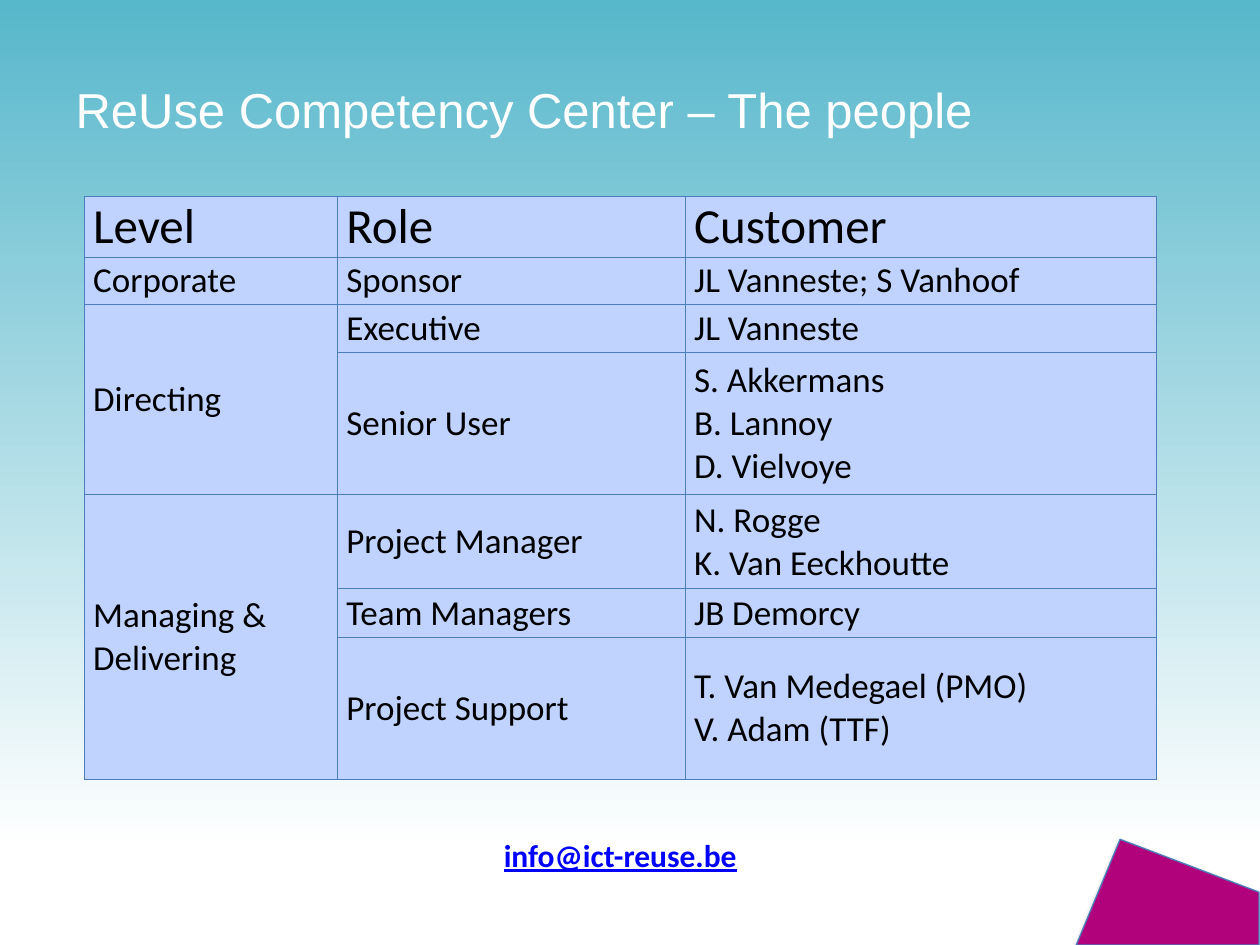
from lxml import etree
from pptx import Presentation
from pptx.dml.color import RGBColor
from pptx.enum import text
from pptx.oxml import ns
from pptx.util import Pt

BORDER = "4B7EBC"
COLUMNS = [144.72, 198.72, 269.28]
HEIGHTS = [34.8, 27.2, 27.2, 81.2, 54, 27.6, 81.2]
ROWS = [
    ("Level", "Role", "Customer"),
    ("Corporate", "Sponsor", "JL Vanneste; S Vanhoof"),
    ("Directing", "Executive", "JL Vanneste"),
    ("", "Senior User", "S. Akkermans\nB. Lannoy\nD. Vielvoye"),
    ("Managing & Delivering", "Project Manager", "N. Rogge\nK. Van Eeckhoutte"),
    ("", "Team Managers", "JB Demorcy"),
    ("", "Project Support", "T. Van Medegael (PMO)\nV. Adam (TTF)"),
]
LEVEL_SPANS = [(2, 3), (4, 6)]


def rgb(value):
    return RGBColor.from_string(value)


def child(parent, tag, **attrs):
    return etree.SubElement(parent, ns.qn(tag), attrs)


def set_font(p, name, size, color):
    p.font.name, p.font.size = name, Pt(size)
    p.font.color.rgb = rgb(color)


def paint_background(s):
    fill = s.background.fill
    fill.gradient()
    fill.gradient_angle = 270
    for stop, color, position in zip(fill.gradient_stops, ("57B7CB", "FFFFFF"), (0, 0.9)):
        stop.color.rgb = rgb(color)
        stop.position = position


def add_corner(s, x, y, w, h):
    builder = s.shapes.build_freeform(Pt(x), Pt(y + h), scale=1)
    builder.add_line_segments([
        (Pt(x + 0.24 * w), Pt(y)),
        (Pt(x + w), Pt(y + 0.5 * h)),
        (Pt(x + w), Pt(y + h)),
    ])
    sp = builder.convert_to_shape()
    sp.fill.solid()
    sp.fill.fore_color.rgb = rgb("B1027C")
    sp.line.color.rgb = rgb(BORDER)
    sp.line.width = Pt(0.75)
    sp.shadow.inherit = False
    effects = sp._element.spPr.find(ns.qn("a:effectLst"))
    shadow = child(effects, "a:outerShdw", blurRad=str(Pt(3.1)), dist=str(Pt(1.8)),
                   dir="5400000", rotWithShape="0")
    child(child(shadow, "a:srgbClr", val="000000"), "a:alpha", val="35000")


def place_title(s, x, y, w, h):
    sp = s.shapes.title
    sp.left, sp.top, sp.width, sp.height = Pt(x), Pt(y), Pt(w), Pt(h)
    tf = sp.text_frame
    tf.text = "ReUse Competency Center – The people"
    tf.vertical_anchor = text.MSO_ANCHOR.MIDDLE
    p = tf.paragraphs[0]
    p.alignment = text.PP_ALIGN.LEFT
    set_font(p, "Arial", 28, "FFFFFF")


def set_borders(cell):
    tcPr = cell._tc.get_or_add_tcPr()
    for i, side in enumerate(("a:lnL", "a:lnR", "a:lnT", "a:lnB")):
        ln = etree.Element(ns.qn(side), w=str(Pt(0.75)))
        child(child(ln, "a:solidFill"), "a:srgbClr", val=BORDER)
        tcPr.insert(i, ln)


def format_cell(cell, content, size):
    cell.text = content
    cell.vertical_anchor = text.MSO_ANCHOR.MIDDLE
    cell.margin_left = cell.margin_right = Pt(5)
    cell.margin_top = cell.margin_bottom = 0
    cell.fill.solid()
    cell.fill.fore_color.rgb = rgb("C0D3FF")
    set_borders(cell)
    for p in cell.text_frame.paragraphs:
        set_font(p, "Calibri", size, "000000")


def add_people_table(s, x, y):
    table = s.shapes.add_table(len(ROWS), len(COLUMNS), Pt(x), Pt(y),
                               Pt(sum(COLUMNS)), Pt(sum(HEIGHTS))).table
    for column, width in zip(table.columns, COLUMNS):
        column.width = Pt(width)
    for i, (row, height) in enumerate(zip(table.rows, HEIGHTS)):
        row.height = Pt(height)
        for cell, content in zip(row.cells, ROWS[i]):
            format_cell(cell, content, 20 if i else 28)
    for first, last in LEVEL_SPANS:
        table.cell(first, 0).merge(table.cell(last, 0))


def add_contact(s, x, y, w, h):
    tf = s.shapes.add_textbox(Pt(x), Pt(y), Pt(w), Pt(h)).text_frame
    tf.word_wrap = True
    p = tf.paragraphs[0]
    p.text = "info@ict-reuse.be"
    set_font(p, "Calibri", 18, "0000FF")
    p.font.bold = p.font.underline = True


def main():
    prs = Presentation()
    prs.slide_width, prs.slide_height = Pt(720), Pt(540)
    s = prs.slides.add_slide(prs.slide_layouts[5])
    paint_background(s)
    add_corner(s, 615, 479.6, 104.4, 60.4)
    place_title(s, 36, 10, 666.72, 104.4)
    add_people_table(s, 48.24, 112.2)
    add_contact(s, 280.8, 474, 329, 51)
    prs.save("out.pptx")


if __name__ == "__main__":
    main()
